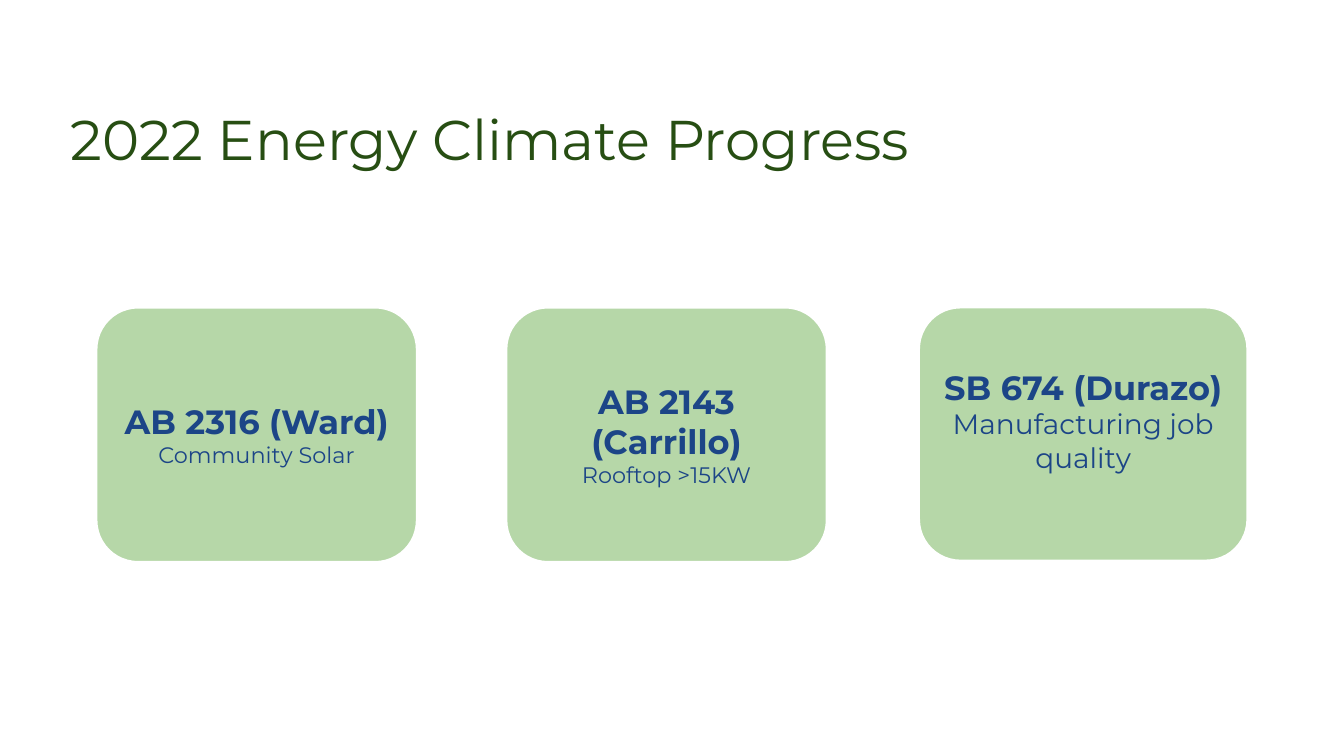
import pptx
import pptx.util
import pptx.dml.color
import pptx.enum.shapes
import pptx.enum.text

Pt = pptx.util.Pt
FONT = "Montserrat"
GREEN, DARK, BLUE, WHITE = "B6D7A8", "274E13", "1C4587", "FFFFFF"
INSET = 7.2

TITLE = "2022 Energy Climate Progress"
TOP = 164.16
# left, width, height, bottom inset, bill, topic, topic size
CARDS = [
    (51.12, 172.8, 137.52, INSET, "AB 2316 (Ward)", "Community Solar", 12),
    (270.72, 172.8, 137.52, INSET, "AB 2143 (Carrillo)", "Rooftop >15KW", 12),
    (491.76, 177.12, 136.8, 21.8, "SB 674 (Durazo)", "Manufacturing job quality", 15),
]


def color(code):
    return pptx.dml.color.RGBColor.from_string(code)


def set_frame(frame, anchor, bottom=INSET):
    frame.word_wrap = True
    frame.vertical_anchor = anchor
    frame.margin_left = frame.margin_right = frame.margin_top = Pt(INSET)
    frame.margin_bottom = Pt(bottom)


def add_run(para, text, size, code, bold=False):
    run = para.add_run()
    run.text = text
    font = run.font
    font.name, font.size, font.bold = FONT, Pt(size), bold
    font.color.rgb = color(code)


def add_card(slide, left, width, height, bottom, bill, topic, size):
    kind = pptx.enum.shapes.MSO_SHAPE.FLOWCHART_ALTERNATE_PROCESS
    card = slide.shapes.add_shape(kind, Pt(left), Pt(TOP), Pt(width), Pt(height))
    card.shadow.inherit = False
    card.fill.solid()
    card.fill.fore_color.rgb = color(GREEN)
    card.line.color.rgb = color(WHITE)
    card.line.width = Pt(2.25)
    frame = card.text_frame
    set_frame(frame, pptx.enum.text.MSO_ANCHOR.MIDDLE, bottom)
    lines = [(bill, 18, True), (topic, size, False)]
    for i, (text, points, bold) in enumerate(lines):
        para = frame.add_paragraph() if i else frame.paragraphs[0]
        para.alignment = pptx.enum.text.PP_ALIGN.CENTER
        add_run(para, text, points, BLUE, bold)


deck = pptx.Presentation()
deck.slide_width, deck.slide_height = Pt(720), Pt(405)
slide = deck.slides.add_slide(deck.slide_layouts[6])

title = slide.shapes.add_textbox(Pt(30.96), Pt(33.84), Pt(669.6), Pt(65.52))
set_frame(title.text_frame, pptx.enum.text.MSO_ANCHOR.BOTTOM)
add_run(title.text_frame.paragraphs[0], TITLE, 30, DARK)

for card in CARDS:
    add_card(slide, *card)

deck.save("out.pptx")
